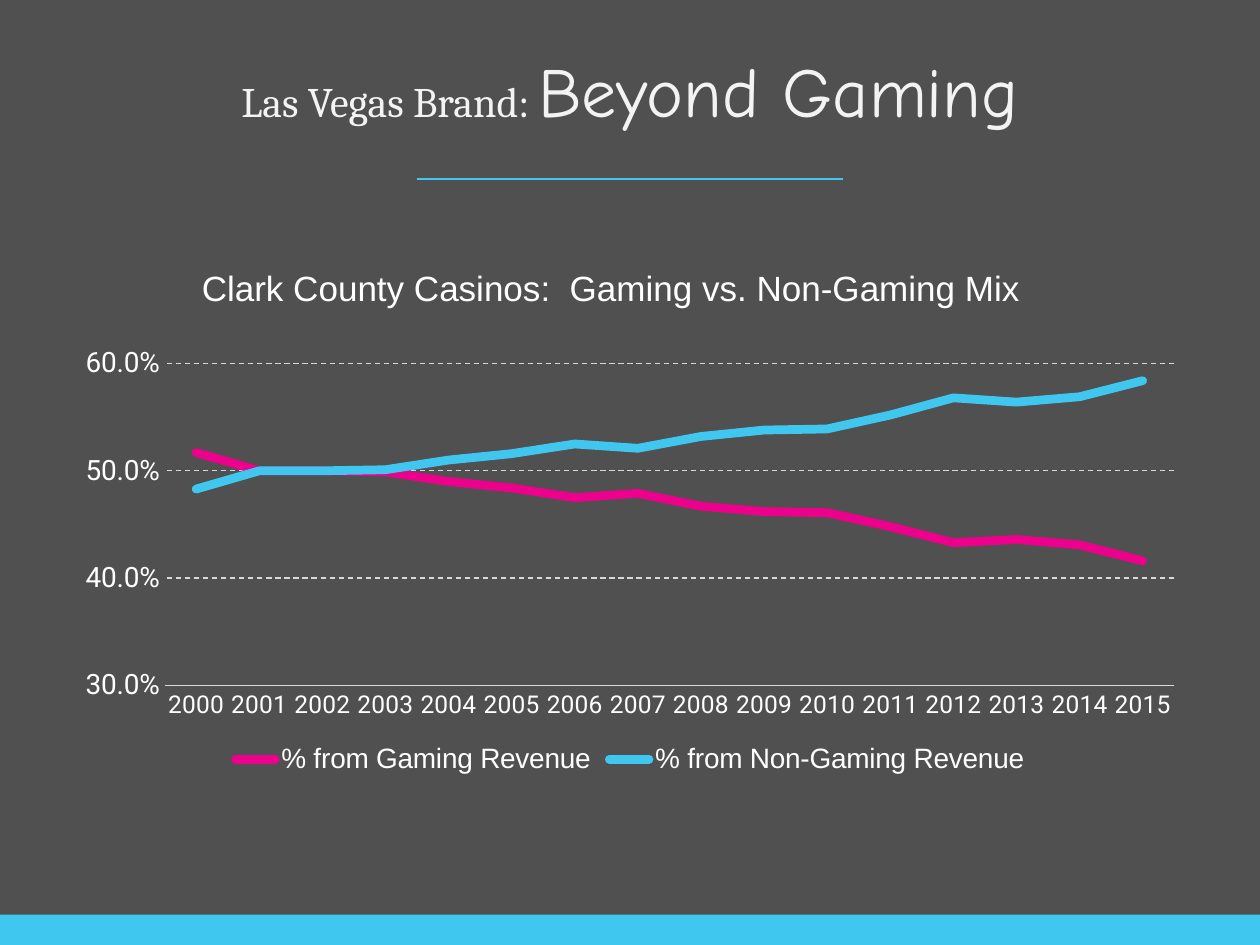
from pptx import Presentation
from pptx.chart.data import CategoryChartData
from pptx.dml.color import RGBColor
from pptx.enum.chart import XL_CHART_TYPE as ChartType, XL_LEGEND_POSITION as LegendPosition
from pptx.enum.chart import XL_MARKER_STYLE as MarkerStyle, XL_TICK_MARK as TickMark
from pptx.enum.dml import MSO_LINE as Dash
from pptx.enum.shapes import MSO_CONNECTOR as Connector, MSO_SHAPE as Shape
from pptx.enum.text import MSO_ANCHOR as Anchor, PP_ALIGN as Align
from pptx.oxml.ns import qn
from pptx.util import Inches, Pt

CHARCOAL = RGBColor(0x50, 0x50, 0x50)
SKY = RGBColor(0x40, 0xC7, 0xEF)
PINK = RGBColor(0xEC, 0x00, 0x8C)
WHITE = RGBColor(0xFF, 0xFF, 0xFF)
OFF_WHITE = RGBColor(0xF3, 0xF3, 0xF3)
SILVER = RGBColor(0xD9, 0xD9, 0xD9)


def style(font, name, size, color=WHITE):
    font.name = name
    font.size = Pt(size)
    font.bold = False
    font.color.rgb = color


def add_text(page, left, top, width, height, spans, inset=0.1):
    box = page.shapes.add_textbox(Inches(left), Inches(top), Inches(width), Inches(height))
    frame = box.text_frame
    frame.word_wrap = True
    frame.vertical_anchor = Anchor.MIDDLE
    frame.margin_top = frame.margin_bottom = Inches(inset)
    para = frame.paragraphs[0]
    para.alignment = Align.CENTER
    for text, name, size, color in spans:
        span = para.add_run()
        span.text = text
        style(span.font, name, size, color)


deck = Presentation()
deck.slide_width, deck.slide_height = Inches(10), Inches(7.5)
page = deck.slides.add_slide(deck.slide_layouts[6])
page.background.fill.solid()
page.background.fill.fore_color.rgb = CHARCOAL

footer = page.shapes.add_shape(Shape.RECTANGLE, 0, Inches(7.26), Inches(10), Inches(0.24))
footer.shadow.inherit = False
footer.fill.solid()
footer.fill.fore_color.rgb = SKY
footer.line.fill.background()

rule = page.shapes.add_connector(Connector.STRAIGHT, Inches(3.31), Inches(1.42), Inches(6.69), Inches(1.42))
rule.line.color.rgb = SKY
rule.line.width = Pt(1.5)
properties = rule._element.spPr
properties.append(properties.makeelement(qn("a:effectLst"), {}))

add_text(page, 0.5, 0, 9, 1.42, [
    ("Las Vegas Brand: ", "Cambria", 24, OFF_WHITE),
    ("Beyond Gaming", "Comic Neue", 40, OFF_WHITE),
])
add_text(page, -0.15, 2.06, 10, 0.44, [
    ("Clark County Casinos:  Gaming vs. Non-Gaming Mix", "Arial", 20, WHITE),
], inset=0.05)

gaming = [0.517, 0.5, 0.5, 0.499, 0.49, 0.484, 0.475, 0.479,
          0.467, 0.462, 0.461, 0.448, 0.433, 0.436, 0.431, 0.416]
non_gaming = [0.483, 0.5, 0.5, 0.501, 0.51, 0.516, 0.525, 0.521,
              0.532, 0.538, 0.539, 0.552, 0.568, 0.564, 0.569, 0.584]
data = CategoryChartData(number_format="0.0%")
data.categories = [str(year) for year in range(2000, 2016)]
data.add_series("% from Gaming Revenue", gaming)
data.add_series("% from Non-Gaming Revenue", non_gaming)
chart = page.shapes.add_chart(
    ChartType.LINE, Inches(0.5), Inches(2.69), Inches(9), Inches(3.5), data).chart
chart.has_title = False
style(chart.font, "Arial", 10)
chart.plots[0].vary_by_categories = False

for series, color in zip(chart.plots[0].series, (PINK, SKY)):
    series.smooth = False
    series.marker.style = MarkerStyle.NONE
    series.format.line.color.rgb = color
    series.format.line.width = Pt(5)
    series._element.find(qn("c:spPr")).find(qn("a:ln")).set("cap", "rnd")

years = chart.category_axis
shares = chart.value_axis
for axis, size in ((years, 14), (shares, 16)):
    axis.major_tick_mark = axis.minor_tick_mark = TickMark.NONE
    style(axis.tick_labels.font, "Roboto", size)
years.format.line.color.rgb = SILVER
years.format.line.width = Pt(0.75)

shares.minimum_scale, shares.maximum_scale = 0.3, 0.6
shares.major_unit = 0.1
shares.tick_labels.number_format = "0.0%"
shares.tick_labels.number_format_is_linked = False
shares.format.line.fill.background()
grid = shares.major_gridlines.format.line
grid.color.rgb = SILVER
grid.width = Pt(0.75)
grid.dash_style = Dash.DASH

chart.has_legend = True
chart.legend.position = LegendPosition.BOTTOM
chart.legend.include_in_layout = False
style(chart.legend.font, "Arial", 16)

deck.save("out.pptx")
